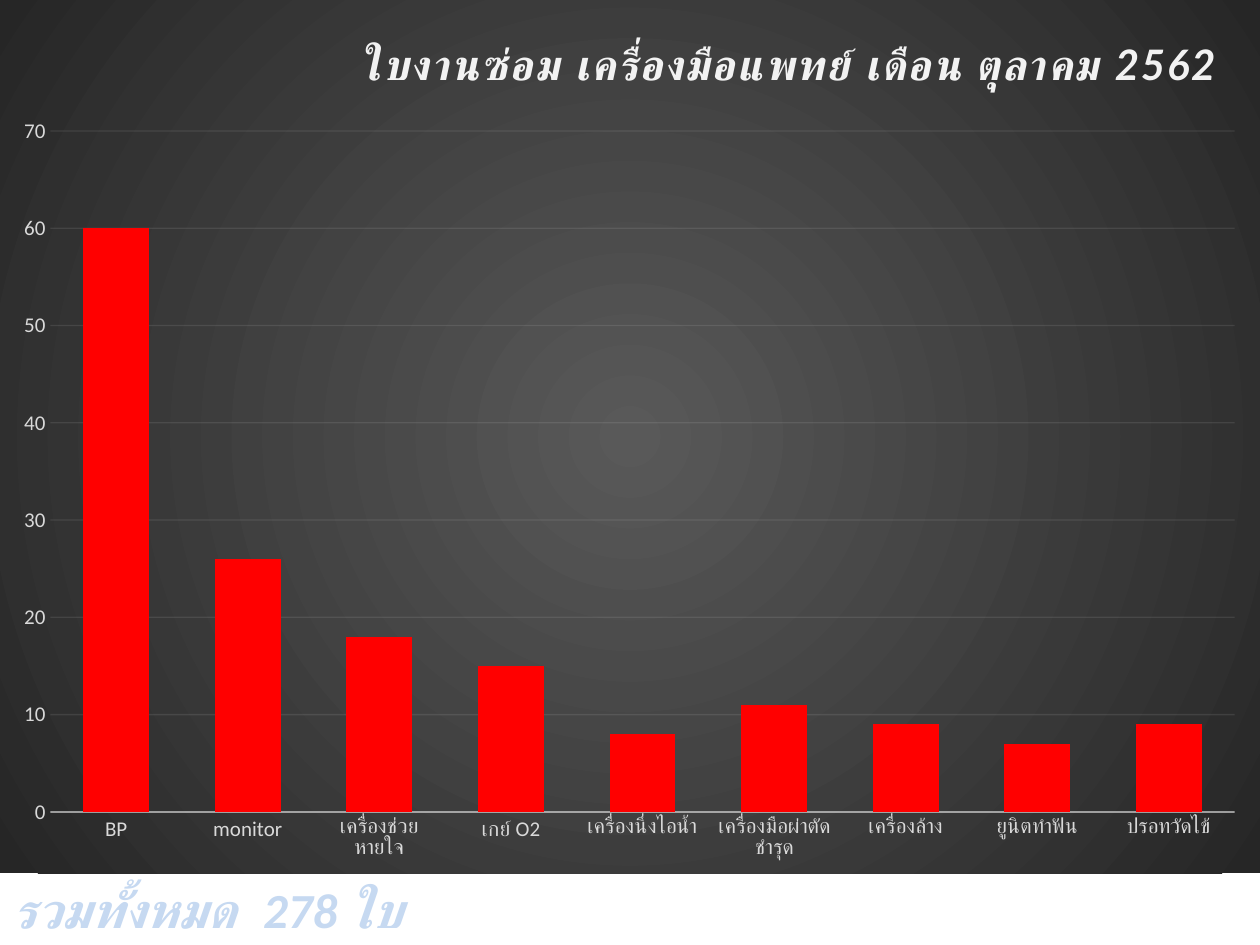
from lxml import etree
from pptx import Presentation
from pptx.chart.data import CategoryChartData
from pptx.dml.color import RGBColor
from pptx.enum import chart as chart_enum, text as text_enum
from pptx.oxml import parse_xml
from pptx.oxml.ns import nsdecls, qn
from pptx.util import Pt

COLORS = {
    "bar": "FF0000",
    "label": "D9D9D9",
    "light": "F2F2F2",
    "total": "C6D9F1",
    "center": "595959",
    "edge": "262626",
}
REPAIRS = {
    "BP": 60,
    "monitor": 26,
    "เครื่องช่วยหายใจ": 18,
    "เกย์ O2": 15,
    "เครื่องนึ่งไอน้ำ": 8,
    "เครื่องมือผ่าตัด ชำรุด": 11,
    "เครื่องล้าง": 9,
    "ยูนิตทำฟัน": 7,
    "ปรอทวัดไข้": 9,
}


def add_run(paragraph, text, font, size, color):
    """Append a bold italic run and return it."""
    run = paragraph.add_run()
    run.text = text
    run.font.name = font
    run.font.size = Pt(size)
    run.font.bold = run.font.italic = True
    run.font.color.rgb = RGBColor.from_string(COLORS[color])
    return run


def manual_layout(target="", **fractions):
    """Return a c:layout element placed by fractions of the chart."""
    modes = "".join(f'<c:{axis}Mode val="edge"/>' for axis in "xy")
    values = "".join(f'<c:{key} val="{value}"/>' for key, value in fractions.items())
    return parse_xml(f'<c:layout {nsdecls("c")}><c:manualLayout>{target}{modes}{values}'
                     "</c:manualLayout></c:layout>")


presentation = Presentation()
presentation.slide_width, presentation.slide_height = Pt(720), Pt(540)
slide = presentation.slides.add_slide(presentation.slide_layouts[6])

# Total below the chart
total_box = slide.shapes.add_textbox(Pt(0), Pt(499), Pt(516), Pt(41))
total_box.text_frame.word_wrap = True
total_box.text_frame.auto_size = text_enum.MSO_AUTO_SIZE.SHAPE_TO_FIT_TEXT
for words, font in (("รวม", "Calibri"), ("ทั้งหมด", "Lato"), ("  278 ใบ", "Calibri")):
    add_run(total_box.text_frame.paragraphs[0], words, font, 28, "total")

# Column chart
data = CategoryChartData()
data.categories = list(REPAIRS)
data.add_series("Series 1", list(REPAIRS.values()))
chart = slide.shapes.add_chart(chart_enum.XL_CHART_TYPE.COLUMN_CLUSTERED,
                               Pt(0), Pt(0), Pt(720), Pt(499), data).chart
chart.has_legend = False
chart.font.name = "Calibri"
chart.font.size = Pt(10)

plot = chart.plots[0]
plot.vary_by_categories = False
plot.gap_width, plot.overlap = 100, -24
bars = plot.series[0].format.fill
bars.solid()
bars.fore_color.rgb = RGBColor.from_string(COLORS["bar"])

# Chart title
chart.has_title = True
chart.chart_title.include_in_layout = False
paragraph = chart.chart_title.text_frame.paragraphs[0]
run = add_run(paragraph, "ใบงานซ่อม เครื่องมือแพทย์ เดือน ตุลาคม 2562", "Lato", 24, "light")
run.font._element.set("spc", "100")

# Axes
for axis in (chart.category_axis, chart.value_axis):
    axis.major_tick_mark = axis.minor_tick_mark = chart_enum.XL_TICK_MARK.NONE
    labels = axis.tick_labels.font
    labels.name, labels.size = "Calibri", Pt(12)
    labels.color.rgb = RGBColor.from_string(COLORS["label"])
chart.value_axis.minimum_scale, chart.value_axis.maximum_scale = 0, 70
chart.value_axis.major_unit = 10
chart.value_axis.format.line.fill.background()
for line, width, tag, opacity in (
    (chart.category_axis.format.line, 1, "c:catAx/c:spPr", 54),
    (chart.value_axis.major_gridlines.format.line, 0.75, "c:majorGridlines", 10),
):
    line.width = Pt(width)
    line.color.rgb = RGBColor.from_string(COLORS["light"])
    for color in chart.element.xpath(f".//{tag}//a:srgbClr"):
        etree.SubElement(color, qn("a:alpha")).set("val", str(opacity * 1000))

# Positions of title and plot area
title_element = chart.element.find(".//" + qn("c:title"))
plot_area = chart.element.find(".//" + qn("c:plotArea"))
for parent in (title_element, plot_area):
    for layout in parent.findall(qn("c:layout")):
        parent.remove(layout)
title_element.find(qn("c:tx")).addnext(manual_layout(x=0.28, y=0.03))
plot_area.insert(0, manual_layout('<c:layoutTarget val="inner"/>',
                                  x=0.04, y=0.15, w=0.94, h=0.78))

# Radial background of the chart
chart.element.find(qn("c:chart")).addnext(parse_xml(
    f'<c:spPr {nsdecls("c", "a")}><a:gradFill><a:gsLst>'
    f'<a:gs pos="0"><a:srgbClr val="{COLORS["center"]}"/></a:gs>'
    f'<a:gs pos="100000"><a:srgbClr val="{COLORS["edge"]}"/></a:gs></a:gsLst>'
    '<a:path path="circle"><a:fillToRect l="50000" t="50000" r="50000" b="50000"/></a:path>'
    "</a:gradFill><a:ln><a:noFill/></a:ln></c:spPr>"))

presentation.save("out.pptx")
